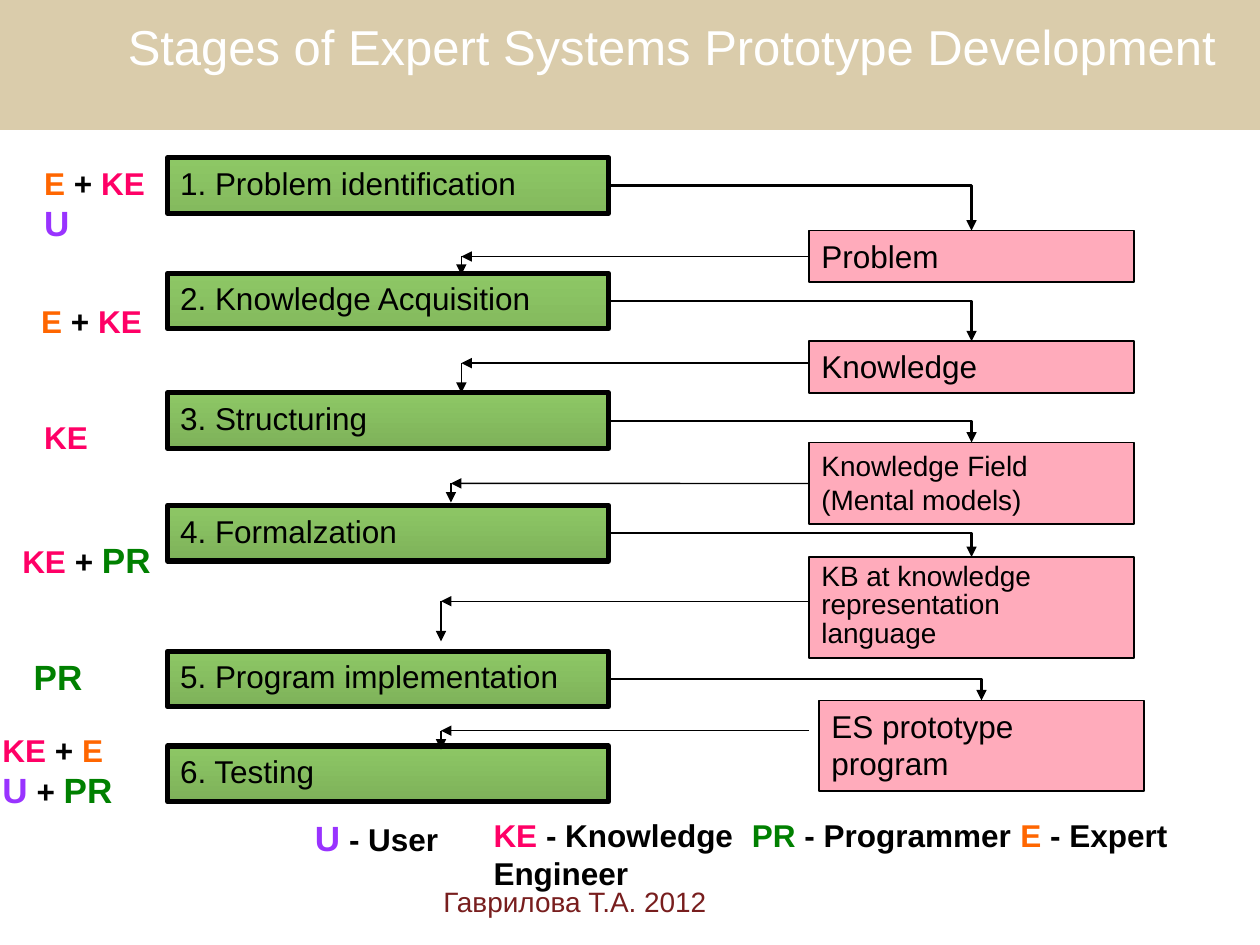
from lxml import etree
from pptx import Presentation
from pptx.dml.color import RGBColor
from pptx.enum.shapes import MSO_CONNECTOR, MSO_SHAPE
from pptx.enum.text import MSO_ANCHOR, MSO_AUTO_SIZE, PP_ALIGN
from pptx.oxml.ns import qn
from pptx.util import Cm, Pt

RECTANGLE = MSO_SHAPE.RECTANGLE
STRAIGHT, ELBOW = MSO_CONNECTOR.STRAIGHT, MSO_CONNECTOR.ELBOW
TOP_ANCHOR, MIDDLE = MSO_ANCHOR.TOP, MSO_ANCHOR.MIDDLE
GROW, FIXED = MSO_AUTO_SIZE.SHAPE_TO_FIT_TEXT, MSO_AUTO_SIZE.NONE
LEFT_ALIGN, RIGHT_ALIGN = PP_ALIGN.LEFT, PP_ALIGN.RIGHT
TOP, LEFT, RIGHT = 0, 1, 3

COLOURS = {
    "band": "DACCAB", "title": "FFFFFF", "ink": "000000", "footer": "781E1E",
    "stage": "8DC765", "early": "84BA5E", "late": "7EB25A", "result": "FFABBB",
    "U": "9933FF", "KE": "FF0066", "PR": "008000", "E": "FF6600",
}

TITLE = "Stages of Expert Systems Prototype Development"
FOOTER = "Гаврилова Т.А. 2012"

STAGE_LEFT, STAGE_WIDTH, STAGE_HEIGHT = 3.38, 8.89, 1.12
STAGES = [
    ("1. Problem identification", 3.18, "early"),
    ("2. Knowledge Acquisition", 5.51, "early"),
    ("3. Structuring", 7.92, "late"),
    ("4. Formalzation", 10.19, "late"),
    ("5. Program implementation", 13.13, "late"),
    ("6. Testing", 15.04, "late"),
]

RESULT_LEFT, RESULT_WIDTH = 16.31, 6.55
RESULTS = [
    ("Problem", RESULT_LEFT, 4.65, 1.04, 18, 1),
    ("Knowledge", RESULT_LEFT, 6.88, 1.04, 18, 1),
    ("Knowledge Field (Mental models)", RESULT_LEFT, 8.92, 1.65, 16, 1),
    ("KB at knowledge representation language", RESULT_LEFT, 11.23, 2.03, 16, 0.85),
    ("ES prototype program", 16.51, 14.12, 1.83, 18, 1),
]
RETURNS = [
    (9.3, 5.13, 5.54), (9.3, 7.32, 7.92), (9.09, 9.73, 10.13),
    (8.89, 12.12, 12.93), (8.89, 14.73, 15.11),
]

ROLE_SIZES = {"U": 20, "PR": 20}
LEGEND_SIZES = {"U": 20}
ROLES = [
    ((0.64, 3.18, 2.82, 1.85), [[("E", " + "), ("KE", "")], [("U", "")]]),
    ((0.58, 5.97, 2.82, 1.02), [[("E", " + "), ("KE", "")]]),
    ((0.64, 8.31, 2.82, 1.02), [[("KE", "")]]),
    ((0.2, 10.74, 3.18, 1.09), [[("KE", " + "), ("PR", "")]]),
    ((0.43, 13.08, 2.82, 1.09), [[("PR", "")]]),
    ((-0.2, 14.61, 3.61, 1.85),
     [[("KE", " + "), ("E", "")], [("U", " + "), ("PR", "")]]),
]
LEGEND = [
    ((6.1, 16.33, 6.76, 1.09), [[("U", " - User")]]),
    ((9.7, 16.33, 5.51, 1.78), [[("KE", " - Knowledge Engineer")]]),
    ((14.91, 16.33, 6.35, 1.02), [[("PR", " - Programmer")]]),
    ((20.32, 16.33, 5.08, 1.02), [[("E", " - Expert")]]),
]


def colour(key):
    return RGBColor.from_string(COLOURS[key])


def apply(target, formats):
    for attribute, value in formats.items():
        setattr(target, attribute, value)


def set_frame(shape, anchor=TOP_ANCHOR, auto_size=GROW):
    apply(shape.text_frame, {"word_wrap": True, "auto_size": auto_size,
                             "vertical_anchor": anchor})


def add_run(paragraph, words, size, key, bold=False):
    run = paragraph.add_run()
    run.text = words
    apply(run.font, {"name": "Arial", "size": Pt(size), "bold": bold})
    run.font.color.rgb = colour(key)


def write(shape, words, size, key="ink", align=LEFT_ALIGN, spacing=1):
    paragraph = shape.text_frame.paragraphs[0]
    apply(paragraph, {"alignment": align, "line_spacing": spacing})
    add_run(paragraph, words, size, key)


def add_rectangle(slide, place, line_width):
    rectangle = slide.shapes.add_shape(RECTANGLE, *map(Cm, place))
    rectangle.shadow.inherit = False
    if line_width:
        rectangle.line.color.rgb = colour("ink")
        rectangle.line.width = Pt(line_width)
    else:
        rectangle.line.fill.background()
    set_frame(rectangle)
    return rectangle


def add_arrow(slide, kind, start, end, width):
    arrow = slide.shapes.add_connector(kind, *map(Cm, (*start, *end)))
    arrow.line.color.rgb = colour("ink")
    arrow.line.width = Pt(width)
    etree.SubElement(arrow.line._get_or_add_ln(), qn("a:tailEnd"), type="triangle")
    properties = arrow._element.spPr
    etree.SubElement(properties, qn("a:effectLst"))
    if kind == ELBOW:
        properties.find(qn("a:prstGeom")).set("prst", "bentConnector2")
    return arrow


def add_roles(slide, place, lines, sizes):
    box = slide.shapes.add_textbox(*map(Cm, place))
    set_frame(box)
    for index, line in enumerate(lines):
        frame = box.text_frame
        paragraph = frame.add_paragraph() if index else frame.paragraphs[0]
        for role, words in line:
            add_run(paragraph, role, sizes.get(role, 18), role, True)
            if words:
                add_run(paragraph, words, 18, "ink", True)


def main():
    deck = Presentation()
    apply(deck, {"slide_width": Cm(25.4), "slide_height": Cm(19.05)})
    slide = deck.slides.add_slide(deck.slide_layouts[5])

    band = add_rectangle(slide, (0, 0, 25.4, 2.62), 0)
    band.fill.solid()
    band.fill.fore_color.rgb = colour("band")
    slide.shapes._spTree.insert(2, band._element)

    title = slide.shapes.title
    apply(title, {"left": Cm(1.47), "top": Cm(0.2),
                  "width": Cm(23.29), "height": Cm(1.45)})
    set_frame(title)
    write(title, TITLE, 28, "title", RIGHT_ALIGN)

    stages = []
    for words, top, shade in STAGES:
        stage = add_rectangle(slide, (STAGE_LEFT, top, STAGE_WIDTH, STAGE_HEIGHT), 3)
        stage.fill.gradient()
        stage.fill.gradient_angle = 270
        for stop, key, position in zip(stage.fill.gradient_stops, ("stage", shade), (0, 1)):
            stop.color.rgb = colour(key)
            stop.position = position
        write(stage, words, 18)
        stages.append(stage)

    results = []
    for words, left, top, height, size, spacing in RESULTS:
        result = add_rectangle(slide, (left, top, RESULT_WIDTH, height), 1)
        result.fill.solid()
        result.fill.fore_color.rgb = colour("result")
        write(result, words, size, spacing=spacing)
        results.append(result)

    for stage, result, (_, left, top, height, *_), (turn, level, end) in zip(
            stages, results, RESULTS, RETURNS):
        forward = add_arrow(slide, ELBOW, (0, 0), (1, 1), 1.25)
        forward.begin_connect(stage, RIGHT)
        forward.end_connect(result, TOP)

        middle = top + height / 2
        joined = left == RESULT_LEFT and abs(middle - level) < 0.05
        level = middle if joined else level
        back = add_arrow(slide, STRAIGHT, (RESULT_LEFT, level), (turn, level), 0.75)
        if joined:
            back.begin_connect(result, LEFT)
        add_arrow(slide, STRAIGHT, (turn, level), (turn, end), 0.75)

    for entries, sizes in ((ROLES, ROLE_SIZES), (LEGEND, LEGEND_SIZES)):
        for place, lines in entries:
            add_roles(slide, place, lines, sizes)

    footer = slide.shapes.add_textbox(*map(Cm, (8.69, 17.65, 8.05, 1.02)))
    set_frame(footer, MIDDLE, FIXED)
    write(footer, FOOTER, 16, "footer")

    deck.save("out.pptx")


if __name__ == "__main__":
    main()
